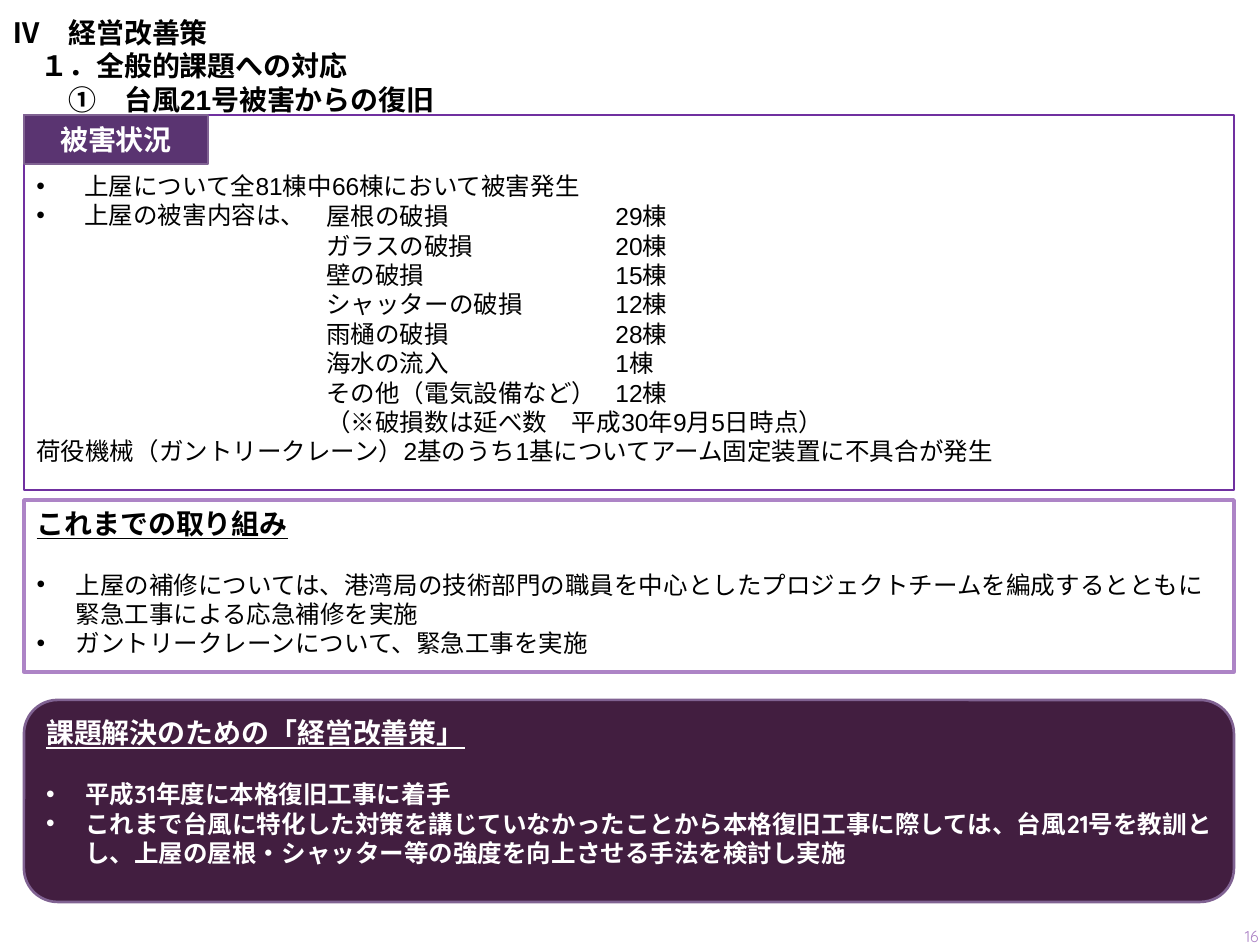
from lxml.etree import SubElement
from pptx import Presentation
from pptx.dml.color import RGBColor
from pptx.enum.shapes import MSO_SHAPE
from pptx.enum.text import MSO_ANCHOR, MSO_AUTO_SIZE, PP_ALIGN
from pptx.oxml.ns import qn
from pptx.util import Emu, Pt

COLORS = {"text": "000000", "white": "FFFFFF", "frame": "7030A0", "tag": "5A3471",
          "edge": "806292", "pale": "AD84C6", "dark": "421E40"}
TITLE = "Ⅳ　経営改善策\v　１．全般的課題への対応\v　　①　台風21号被害からの復旧"
DAMAGE = ["上屋について全81棟中66棟において被害発生", "上屋の被害内容は、"]
CRANE = "荷役機械（ガントリークレーン）2基のうち1基についてアーム固定装置に不具合が発生"
COUNTS = [("屋根の破損", "29棟"), ("ガラスの破損", "20棟"), ("壁の破損", "15棟"),
          ("シャッターの破損", "12棟"), ("雨樋の破損", "28棟"), ("海水の流入", "1棟"),
          ("その他（電気設備など）", "12棟")]
NOTE = "（※破損数は延べ数　平成30年9月5日時点）"
EFFORTS = ["上屋の補修については、港湾局の技術部門の職員を中心としたプロジェクトチームを"
           "編成するとともに緊急工事による応急補修を実施",
           "ガントリークレーンについて、緊急工事を実施"]
PLANS = ["平成31年度に本格復旧工事に着手",
         "これまで台風に特化した対策を講じていなかったことから本格復旧工事に際しては、"
         "台風21号を教訓とし、上屋の屋根・シャッター等の強度を向上させる手法を検討し実施"]


def px(n):
    """Turn px into EMU."""
    return Emu(round(n * 914400 / 126))


def rgb(name):
    """Look up a colour by name."""
    return RGBColor.from_string(COLORS[name])


def place(shape, box):
    """Move a shape to a px box."""
    shape.left, shape.top, shape.width, shape.height = map(px, box)


def paint(shape, fill, line, width):
    """Set the fill and outline of a shape."""
    if fill:
        shape.fill.solid()
        shape.fill.fore_color.rgb = rgb(fill)
    else:
        shape.fill.background()
    shape.line.color.rgb = rgb(line)
    shape.line.width = Pt(width)


def block(slide, kind, box, fill, line, width):
    """Add a painted shape without shadow."""
    shape = slide.shapes.add_shape(kind, *map(px, box))
    shape.shadow.inherit = False
    paint(shape, fill, line, width)
    return shape


def write(shape, lines, size=14, font="Arial", color="text", bold=False,
          align=PP_ALIGN.LEFT, anchor=MSO_ANCHOR.TOP):
    """Fill a shape with evenly styled paragraphs and return them."""
    frame = shape.text_frame
    frame.text = "\n".join(lines)
    frame.word_wrap = True
    frame.auto_size = MSO_AUTO_SIZE.NONE
    frame.vertical_anchor = anchor
    for para in frame.paragraphs:
        para.alignment = align
        para.space_before = Pt(0)
        for run in para.runs:
            run.font.size, run.font.bold, run.font.name = Pt(size), bold, font
            run.font.color.rgb = rgb(color)
    return frame.paragraphs


def bullet(para, indent):
    """Give a paragraph a hanging dot."""
    props = para._p.get_or_add_pPr()
    props.set("marL", str(px(indent)))
    props.set("indent", str(-px(indent)))
    SubElement(props, qn("a:buFont")).set("typeface", "Arial")
    SubElement(props, qn("a:buChar")).set("char", "•")


def section(shape, head, items, **style):
    """Write an underlined heading above a dotted list."""
    first, *rest = write(shape, [head, *items], **style)
    props = first._p.get_or_add_pPr()
    props.set("marL", "0")
    props.set("indent", "0")
    SubElement(props, qn("a:buNone"))
    font = first.runs[0].font
    font.size, font.bold, font.underline = Pt(16), True, True
    for para in rest:
        bullet(para, 39)
    rest[0].space_before = Pt(17)


def column(slide, box, lines):
    """Add one column of the damage counts."""
    write(slide.shapes.add_textbox(*map(px, box)), lines, align=PP_ALIGN.JUSTIFY)


def damage(slide, box):
    """Draw the framed damage report with its tag and counts."""
    x, y, w, h = box
    frame = block(slide, MSO_SHAPE.RECTANGLE, box, None, "frame", 1.25)
    *dots, last = write(frame, [*DAMAGE, CRANE], align=PP_ALIGN.JUSTIFY)
    frame.text_frame.margin_top = px(56)
    for para in dots:
        bullet(para, 48)
    last.space_before = Pt(118)
    tag = block(slide, MSO_SHAPE.RECTANGLE, (x, y, 184, 49), "tag", "edge", 1.5)
    write(tag, ["被害状況"], 16, "Quicksand", "white", True,
          PP_ALIGN.CENTER, MSO_ANCHOR.MIDDLE)
    names, sums = zip(*COUNTS)
    column(slide, (x + 290, y + 80, 609, 310), [*names, NOTE])
    column(slide, (x + 579, y + 80, 170, 310), sums)


def efforts(slide, box):
    """Fill the body placeholder with the work done so far."""
    body = slide.placeholders[1]
    place(body, box)
    paint(body, "white", "pale", 2)
    section(body, "これまでの取り組み", EFFORTS)


def plans(slide, box):
    """Draw the rounded panel of planned measures."""
    panel = block(slide, MSO_SHAPE.ROUNDED_RECTANGLE, box, "dark", "edge", 1.5)
    section(panel, "課題解決のための「経営改善策」", PLANS,
            font="Quicksand", color="white", bold=True)


def main():
    """Build and save the slide."""
    deck = Presentation()
    deck.slide_width, deck.slide_height = px(1260), px(945)
    slide = deck.slides.add_slide(deck.slide_layouts[1])
    place(slide.shapes.title, (0, 9, 1086, 140))
    write(slide.shapes.title, [TITLE], 16, bold=True)
    damage(slide, (24, 115, 1210, 375))
    efforts(slide, (24, 500, 1210, 172))
    plans(slide, (24, 700, 1210, 202))
    page = slide.shapes.add_textbox(*map(px, (1201, 911, 70, 50)))
    write(page, ["16"], 9, "Quicksand", "pale", align=PP_ALIGN.RIGHT,
          anchor=MSO_ANCHOR.MIDDLE)
    deck.save("out.pptx")


if __name__ == "__main__":
    main()
